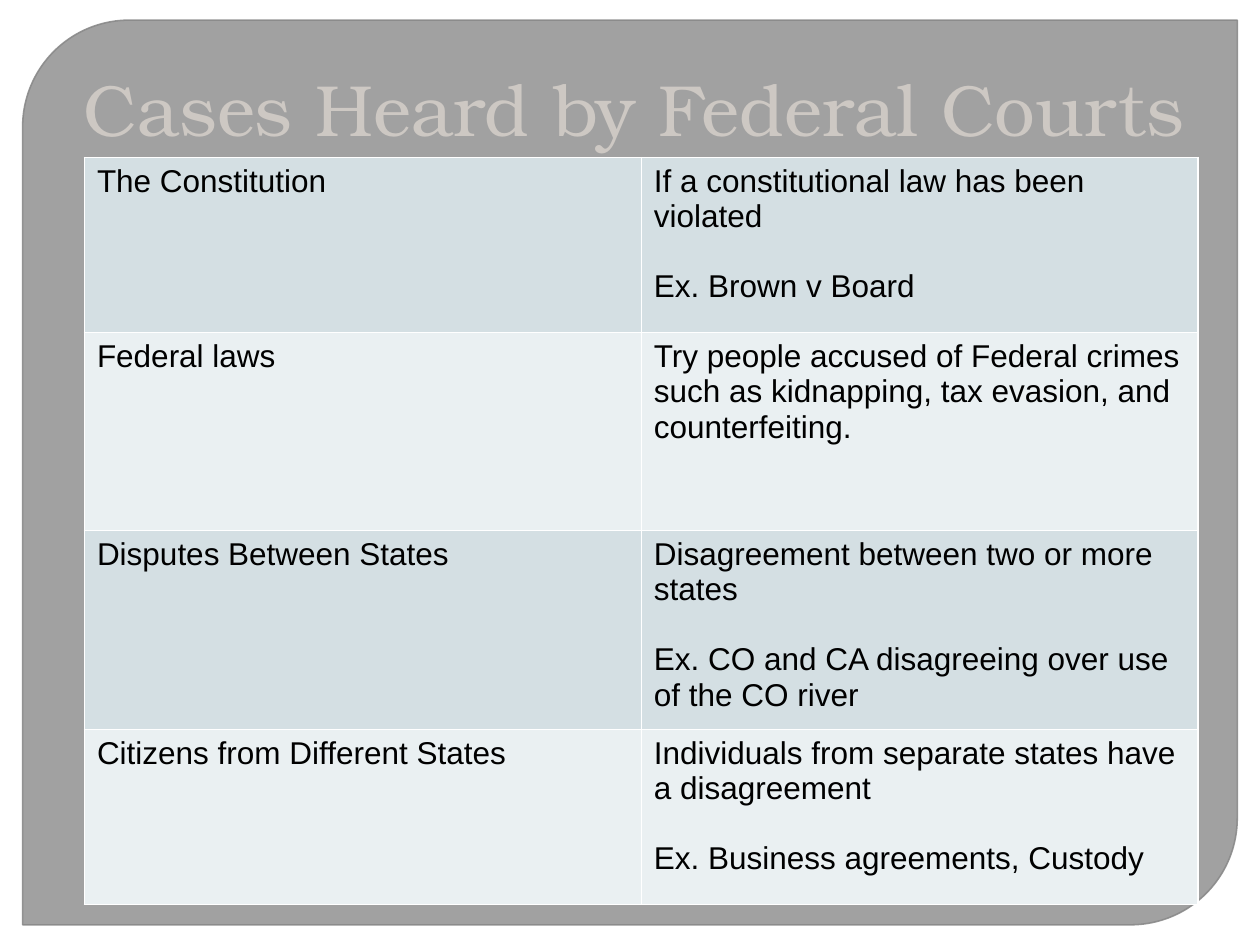
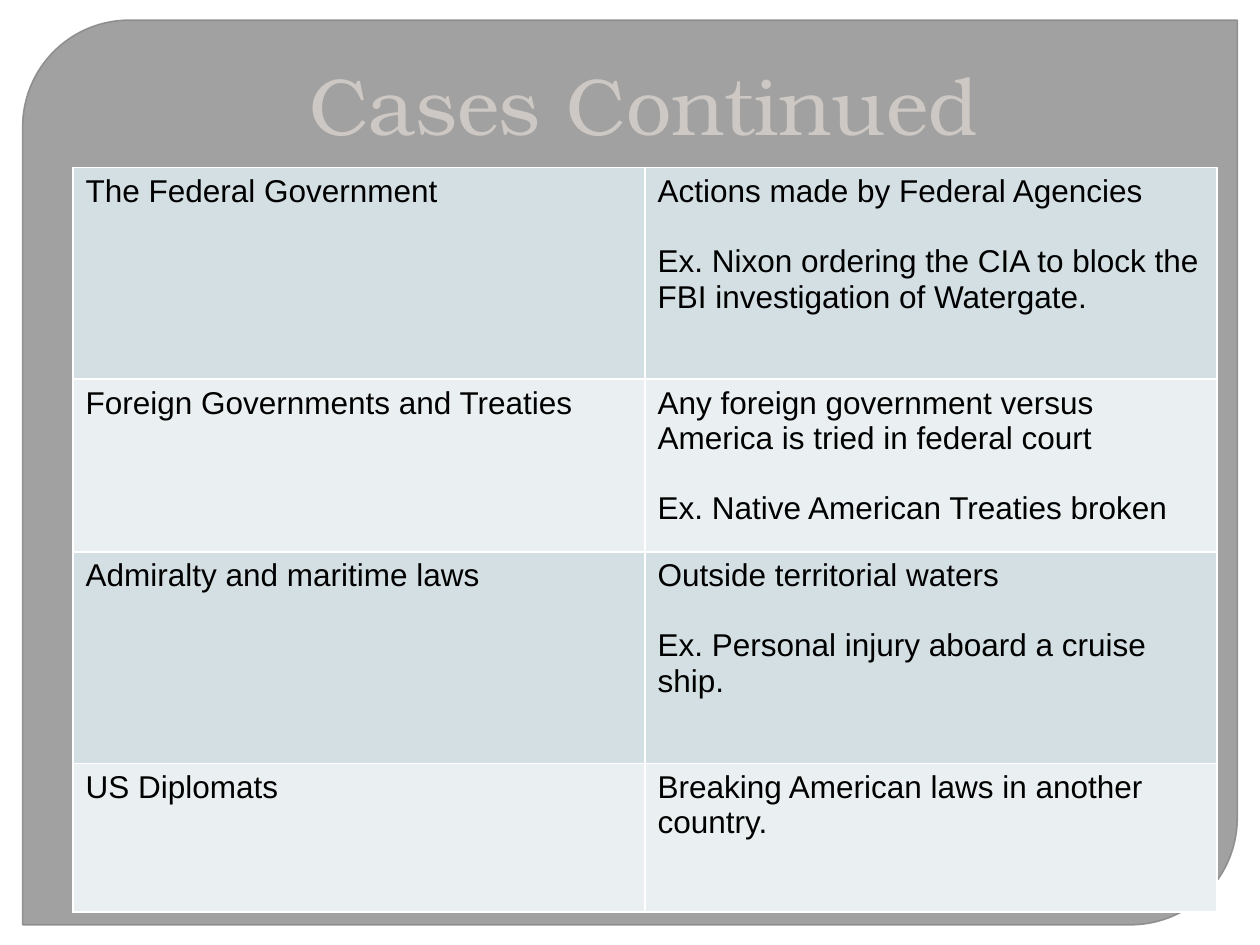
from dataclasses import dataclass

from lxml.etree import SubElement
from pptx import Presentation
from pptx.dml.color import RGBColor
from pptx.enum.shapes import MSO_SHAPE
from pptx.enum.text import MSO_ANCHOR, PP_ALIGN
from pptx.oxml.ns import qn
from pptx.util import Emu, Pt

PX = 9144  # EMU per px, 100 px to the inch

COLORS = {
    "panel": "707070",
    "panel_line": "888888",
    "title": "CDC8C3",
    "text": "000000",
    "border": "FFFFFF",
    "band_dark": "D4DFE3",
    "band_light": "EAF0F2",
}
TITLE_FONT = "TeX Gyre Bonum"
BODY_FONT = "Arial"
BODY_SIZE = 18
EXAMPLE_GAP = 20  # points: one empty line before each example
BORDER_SIDES = ("a:lnL", "a:lnR", "a:lnT", "a:lnB")


@dataclass
class CaseRow:
    height: int
    kind: str
    details: list[str]  # explanation, then an optional example


@dataclass
class CaseSlide:
    title: str
    title_size: float
    title_left: int
    table_left: int
    table_top: int
    col_width: int
    rows: list[CaseRow]


SLIDES = [
    CaseSlide("Cases Heard by Federal Courts", 41.4, 50, 67, 125, 442, [
        CaseRow(139, "The Constitution",
                ["If a constitutional law has been violated",
                 "Ex. Brown v Board"]),
        CaseRow(157, "Federal laws",
                ["Try people accused of Federal crimes such as kidnapping, "
                 "tax evasion, and counterfeiting."]),
        CaseRow(157, "Disputes Between States",
                ["Disagreement between two or more states",
                 "Ex. CO and CA disagreeing over use of the CO river"]),
        CaseRow(139, "Citizens from Different States",
                ["Individuals from separate states have a disagreement",
                 "Ex. Business agreements, Custody"]),
    ]),
    CaseSlide("Cases Continued", 46, 58, 58, 133, 454, [
        CaseRow(168, "The Federal Government",
                ["Actions made by Federal Agencies",
                 "Ex. Nixon ordering the CIA to block the FBI investigation "
                 "of Watergate."]),
        CaseRow(137, "Foreign Governments and Treaties",
                ["Any foreign government versus America is tried in federal court",
                 "Ex. Native American Treaties broken"]),
        CaseRow(168, "Admiralty and maritime laws",
                ["Outside territorial waters",
                 "Ex. Personal injury aboard a cruise ship."]),
        CaseRow(118, "US Diplomats",
                ["Breaking American laws in another country."]),
    ]),
]


def px(n: int) -> Emu:
    return Emu(n * PX)


def rgb(name: str) -> RGBColor:
    return RGBColor.from_string(COLORS[name])


def set_font(p, face: str, size: float, color: str) -> None:
    p.font.name = face
    p.font.size = Pt(size)
    p.font.color.rgb = rgb(color)


def set_opacity(sp, parent: str, percent: int) -> None:
    clr = sp._element.spPr.find(f"{parent}/{qn('a:srgbClr')}")
    SubElement(clr, qn("a:alpha"), val=str(percent * 1000))


def add_panel(s) -> None:
    sp = s.shapes.add_shape(MSO_SHAPE.ROUND_2_DIAG_RECTANGLE,
                            px(18), px(16), px(964), px(718))
    sp.shadow.inherit = False
    sp.adjustments[0] = 0.118
    sp.adjustments[1] = 0
    sp.fill.solid()
    sp.fill.fore_color.rgb = rgb("panel")
    sp.line.color.rgb = rgb("panel_line")
    sp.line.width = Pt(0.87)
    set_opacity(sp, qn("a:solidFill"), 65)
    set_opacity(sp, f"{qn('a:ln')}/{qn('a:solidFill')}", 88)


def add_title(s, spec_row: CaseSlide) -> None:
    tf = s.shapes.add_textbox(px(spec_row.title_left), 0, px(900), px(125)).text_frame
    tf.word_wrap = True
    tf.vertical_anchor = MSO_ANCHOR.BOTTOM
    p = tf.paragraphs[0]
    p.text = spec_row.title
    p.alignment = PP_ALIGN.CENTER
    p._p.get_or_add_pPr().set("marL", str(px(6)))
    set_font(p, TITLE_FONT, spec_row.title_size, "title")


def style_cell(cell, band: str) -> None:
    tc_pr = cell._tc.get_or_add_tcPr()
    for side in BORDER_SIDES:
        ln = SubElement(tc_pr, qn(side), w=str(Pt(1)))
        fill = SubElement(ln, qn("a:solidFill"))
        SubElement(fill, qn("a:srgbClr"), val=COLORS["border"])
    cell.fill.solid()
    cell.fill.fore_color.rgb = rgb(band)


def fill_cell(cell, lines: list[str], band: str) -> None:
    style_cell(cell, band)
    tf = cell.text_frame
    for i, line in enumerate(lines):
        p = tf.add_paragraph() if i else tf.paragraphs[0]
        p.text = line
        if i:
            p.space_before = Pt(EXAMPLE_GAP)
        set_font(p, BODY_FONT, BODY_SIZE, "text")


def add_case_table(s, case: CaseSlide) -> None:
    height = sum(row.height for row in case.rows)
    table = s.shapes.add_table(len(case.rows), 2, px(case.table_left),
                               px(case.table_top), px(2 * case.col_width),
                               px(height)).table
    table.first_row = False
    table.horz_banding = False
    for col in table.columns:
        col.width = px(case.col_width)
    for i, row in enumerate(case.rows):
        table.rows[i].height = px(row.height)
        band = "band_light" if i % 2 else "band_dark"
        fill_cell(table.cell(i, 0), [row.kind], band)
        fill_cell(table.cell(i, 1), row.details, band)


def main() -> None:
    prs = Presentation()
    prs.slide_width = px(1000)
    prs.slide_height = px(750)
    for case in SLIDES:
        s = prs.slides.add_slide(prs.slide_layouts[6])
        add_panel(s)
        add_title(s, case)
        add_case_table(s, case)
    prs.save("out.pptx")


if __name__ == "__main__":
    main()
